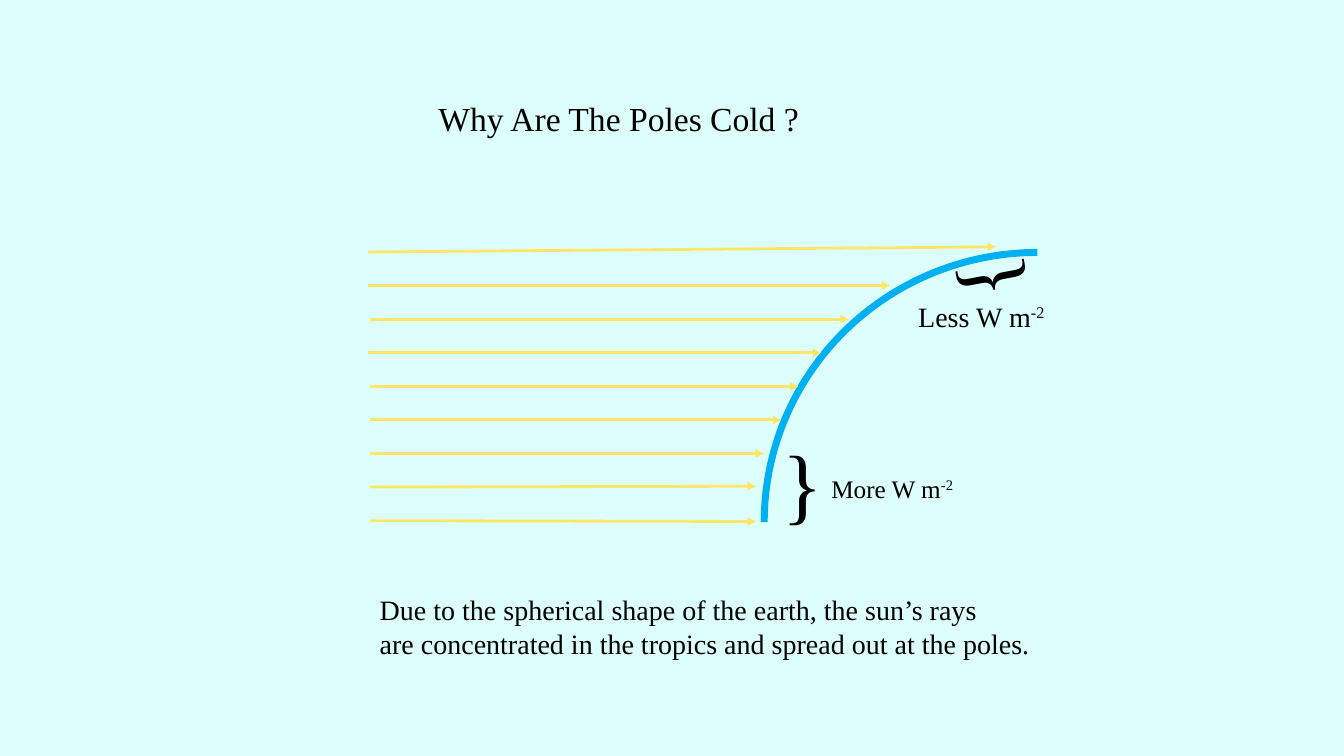
"""Builds a slide on why the poles are cold: sun rays meeting the curved earth."""
from dataclasses import dataclass

from pptx import Presentation
from pptx.dml.color import RGBColor
from pptx.enum.shapes import MSO_CONNECTOR, MSO_SHAPE
from pptx.oxml.ns import qn
from pptx.util import Cm, Pt
from lxml import etree

ARC = MSO_SHAPE.ARC
STRAIGHT = MSO_CONNECTOR.STRAIGHT


@dataclass(frozen=True)
class Theme:
    font: str = "Times New Roman"
    background: RGBColor = RGBColor(0xDC, 0xFF, 0xFB)
    ink: RGBColor = RGBColor(0, 0, 0)
    earth: RGBColor = RGBColor(0x00, 0xB0, 0xF0)
    sun: RGBColor = RGBColor(0xFF, 0xE5, 0x68)
    earth_width: float = 5
    ray_width: float = 2
    title: int = 24
    body: int = 20
    label: int = 18
    brace: int = 60


THEME = Theme()

# text lines, superscript, box (left, top, width, height in cm), size, rotation, wrap
TEXTS = [
    (["Why Are The Poles Cold ?"], "", (10.8, 2.34, 9.91, 1.27), THEME.title, 0, False),
    (["}"], "", (19.48, 10.72, 1.32, 2.82), THEME.brace, 0, True),
    (["}"], "", (24.56, 5.46, 1.32, 2.82), THEME.brace, 79.3, True),
    (["Less W m"], "-2", (22.89, 7.42, 3.76, 1.12), THEME.body, 0, False),
    (["More W m"], "-2", (20.7, 11.79, 3.66, 1.02), THEME.label, 0, False),
    (["Due to the spherical shape of the earth, the sun’s rays",
      "are concentrated in the tropics and spread out at the poles."],
     "", (9.32, 14.81, 16.99, 1.96), THEME.body, 0, False),
]
EARTH_BOX = (19.35, 6.27, 13.59, 13.77)
RAYS_TOP, RAYS_BOTTOM = 6.35, 13.12
RAYS = [
    (9.27, 25.1, -0.13), (9.27, 22.43, 0), (9.32, 21.39, 0),
    (9.27, 20.7, 0), (9.32, 20.12, 0), (9.32, 19.69, 0),
    (9.32, 19.25, 0), (9.32, 19.05, -0.02), (9.32, 19.05, 0.02),
]


def add_text(s, lines, superscript, box, size, rotation, wrap):
    sp = s.shapes.add_textbox(*map(Cm, box))
    sp.rotation = rotation
    tf = sp.text_frame
    tf.word_wrap = wrap
    tf.text = "\n".join(lines)
    if superscript:
        r = tf.paragraphs[-1].add_run()
        r.text = superscript
        r._r.get_or_add_rPr().set("baseline", "30000")
    for p in tf.paragraphs:
        p.font.name = THEME.font
        p.font.size = Pt(size)
        p.font.color.rgb = THEME.ink


def add_earth(s):
    sp = s.shapes.add_shape(ARC, *map(Cm, EARTH_BOX))
    sp.rotation = 270
    sp.shadow.inherit = False
    sp.fill.background()
    sp.line.color.rgb = THEME.earth
    sp.line.width = Pt(THEME.earth_width)


def add_ray(s, start, tip, y, rise):
    ray = s.shapes.add_connector(STRAIGHT, Cm(start), Cm(y), Cm(tip), Cm(y + rise))
    ray.line.color.rgb = THEME.sun
    ray.line.width = Pt(THEME.ray_width)
    etree.SubElement(ray.line._get_or_add_ln(), qn("a:tailEnd"), type="triangle")
    etree.SubElement(ray._element.spPr, qn("a:effectLst"))


def main():
    prs = Presentation()
    prs.slide_width, prs.slide_height = Cm(33.87), Cm(19.05)
    s = prs.slides.add_slide(prs.slide_layouts[6])
    s.background.fill.solid()
    s.background.fill.fore_color.rgb = THEME.background
    add_earth(s)
    step = (RAYS_BOTTOM - RAYS_TOP) / (len(RAYS) - 1)
    for i, (start, tip, rise) in enumerate(RAYS):
        add_ray(s, start, tip, RAYS_TOP + i * step, rise)
    for text in TEXTS:
        add_text(s, *text)
    prs.save("out.pptx")


if __name__ == "__main__":
    main()
